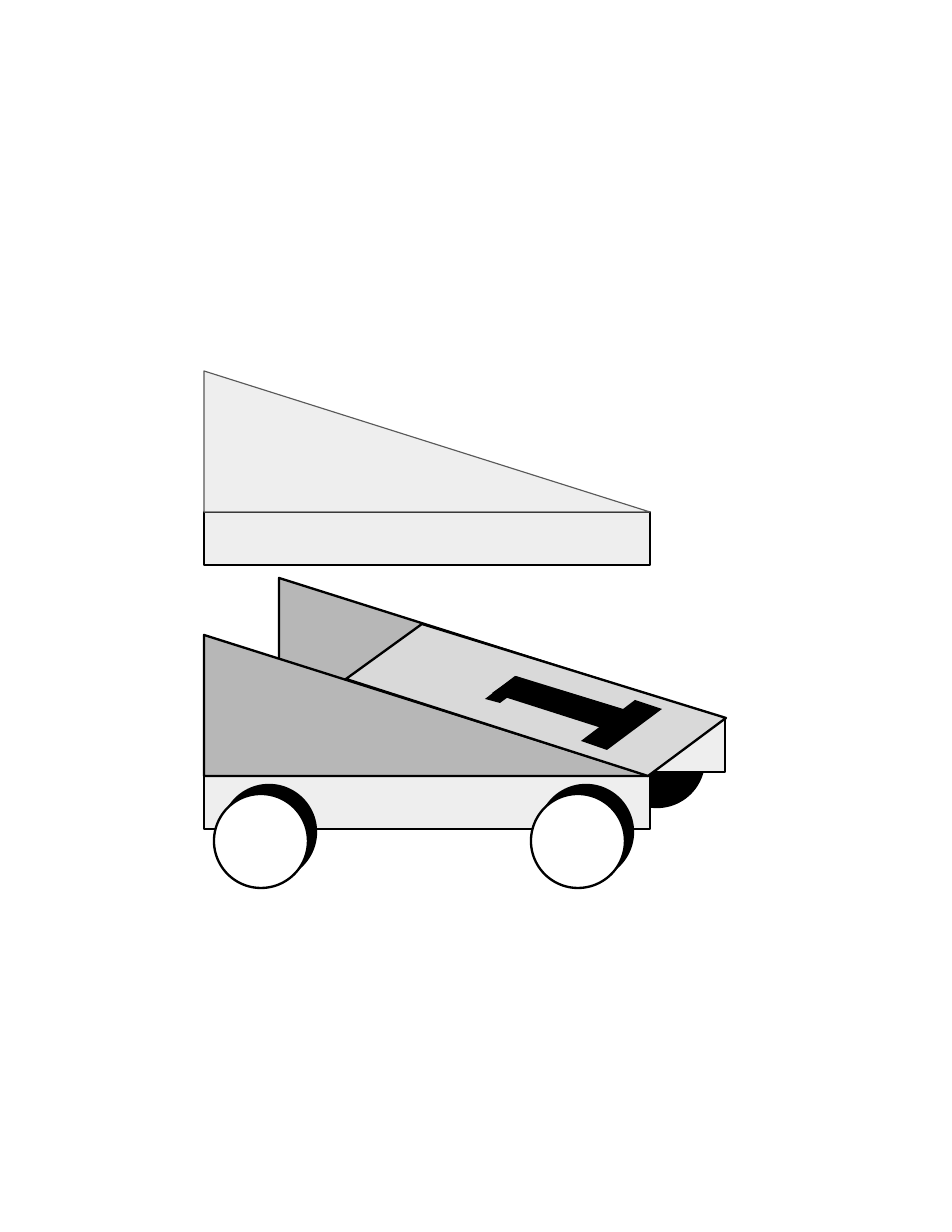
from pptx import Presentation
from pptx.dml.color import RGBColor
from pptx.enum.shapes import MSO_SHAPE
from pptx.util import Emu, Pt

OVAL = MSO_SHAPE.OVAL
RECT = MSO_SHAPE.RECTANGLE
WEDGE = MSO_SHAPE.RIGHT_TRIANGLE
SCALE = 914400 / 112  # EMU per px


def px(n):
    return Emu(round(n * SCALE))


def paint(shape, fill, line="000000", width=1.5):
    shape.shadow.inherit = False
    shape.fill.solid()
    shape.fill.fore_color.rgb = RGBColor.from_string(fill)
    if line:
        shape.line.color.rgb = RGBColor.from_string(line)
        shape.line.width = Pt(width)
    else:
        shape.line.fill.background()


prs = Presentation()
prs.slide_width, prs.slide_height = px(952), px(1232)
slide = prs.slides.add_slide(prs.slide_layouts[6])
shapes = slide.shapes

# Far front wheel
SIZE = 94
wheel = shapes.add_shape(OVAL, px(610), px(713), px(SIZE), px(SIZE))
paint(wheel, "000000")

# Side panels: loose piece, far side, near side
WIDE, RISE, BASE = 446, 141, 53
for left, top, fill, line, width in [
    (204, 371, "EEEEEE", "595959", 0.75),
    (279, 578, "B7B7B7", "000000", 1.5),
    (204, 635, "B7B7B7", "000000", 1.5),
]:
    side = shapes.add_group_shape().shapes
    base = side.add_shape(RECT, px(left), px(top + RISE), px(WIDE), px(BASE))
    paint(base, "EEEEEE")
    wedge = side.add_shape(WEDGE, px(left), px(top), px(WIDE), px(RISE))
    paint(wedge, fill, line, width)

# Hood
pen = shapes.build_freeform(422, 624, SCALE)
pen.add_line_segments([(726, 718), (648, 776), (346, 679)])
paint(pen.convert_to_shape(), "D9D9D9")

# Near wheels, each a black tyre behind a white disc
wheels = shapes.add_group_shape().shapes
for left in (214, 531):
    for dx, top, fill in [(8, 785, "000000"), (0, 794, "FFFFFF")]:
        disc = wheels.add_shape(OVAL, px(left + dx), px(top), px(SIZE), px(SIZE))
        paint(disc, fill)

# Number one: stem, foot, flag
number = shapes.add_group_shape().shapes
for first, *rest in [
    [(492, 693), (516, 676), (633, 712), (608, 730)],
    [(607, 750), (581, 741), (635, 700), (662, 709)],
    [(500, 703), (485, 699), (515, 676), (530, 681)],
]:
    pen = number.build_freeform(*first, SCALE)
    pen.add_line_segments(rest)
    paint(pen.convert_to_shape(), "000000", None)

prs.save("out.pptx")
